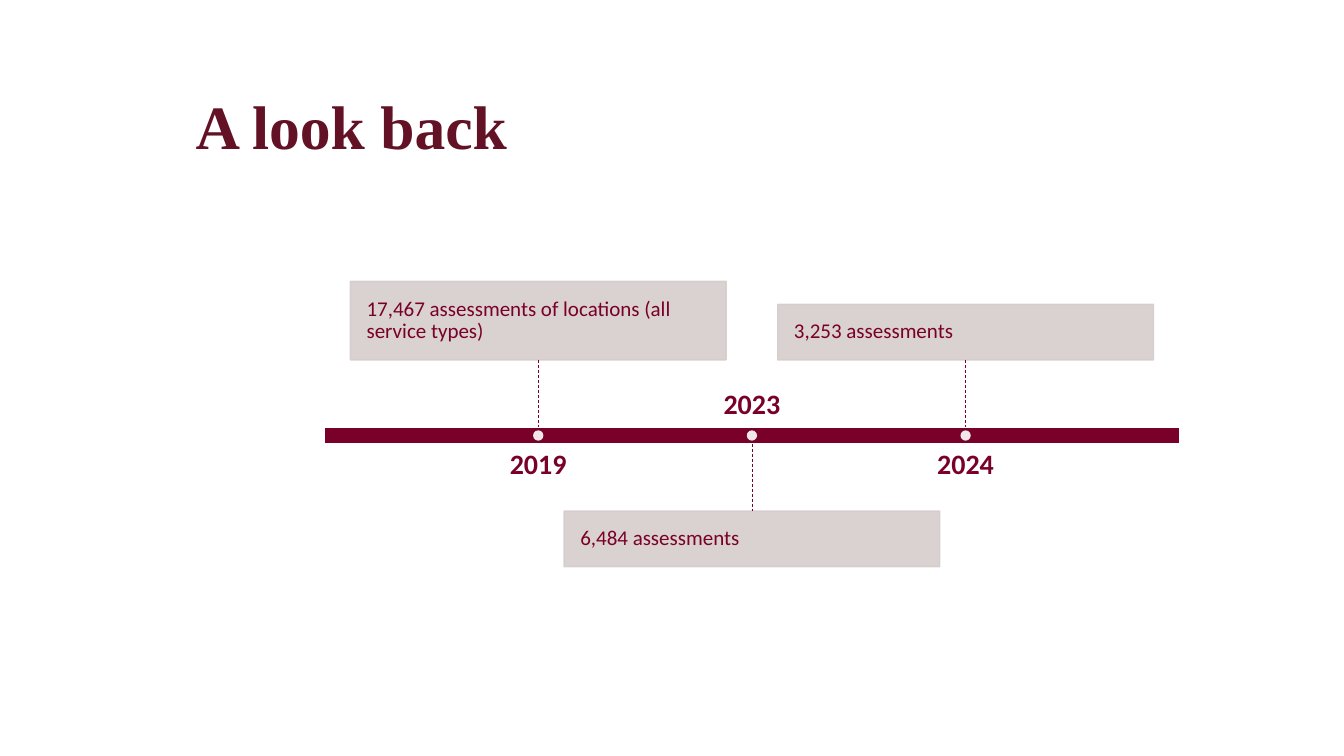
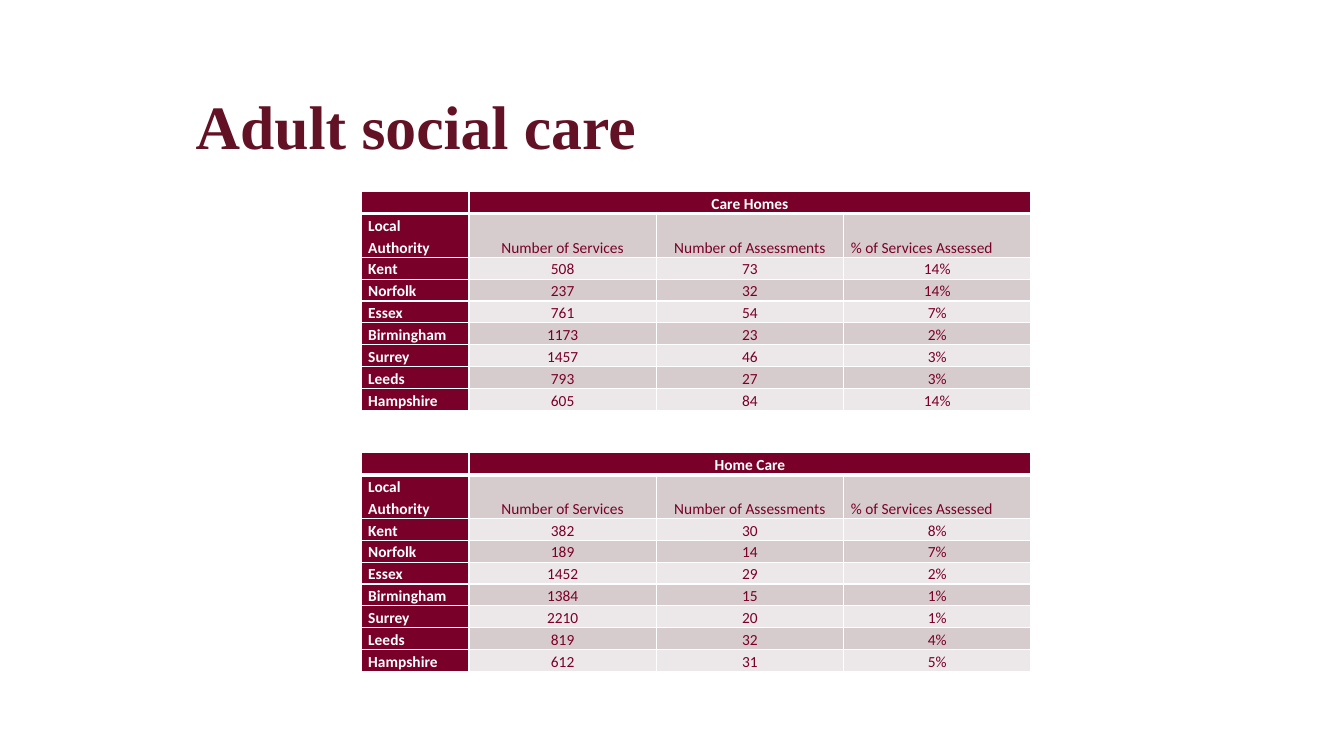
import pptx
import pptx.util
import pptx.dml.color
import pptx.enum.dml
import pptx.enum.shapes
import pptx.enum.text
import pptx.oxml.ns
from lxml import etree

Cm, Pt = pptx.util.Cm, pptx.util.Pt
ALIGN = pptx.enum.text.PP_ALIGN
ANCHOR = pptx.enum.text.MSO_ANCHOR
SHAPE = pptx.enum.shapes.MSO_SHAPE
qn = pptx.oxml.ns.qn

COLORS = {
    "title": "631226",
    "wine": "790028",
    "card": "D7CCCD",
    "pale": "ECE7E8",
    "white": "FFFFFF",
}
BODY_FONT, TITLE_FONT = "Calibri", "Times New Roman"

# Timeline geometry in cm
AXIS_X, AXIS_Y, AXIS_W, AXIS_H = 8.18, 10.77, 21.54, 0.41
STEM, LABEL_GAP = 1.7, 0.17
LABEL_W, LABEL_H = 8.61, 1.14
CARD_W, DOT = 9.47, 0.26

# Year, text, card height, card above the axis
MILESTONES = [
    ("2019", "17,467 assessments of locations (all service types)", 1.98, True),
    ("2023", "6,484 assessments", 1.4, False),
    ("2024", "3,253 assessments", 1.4, True),
]

# Table geometry in cm
TABLE_X, COL_WIDTHS, ROW_H = 9.1, (2.72, 4.72, 4.72, 4.72), 0.54
HEADINGS = ("Local Authority", "Number of Services",
            "Number of Assessments", "% of Services Assessed")
CARE_HOMES = [
    ("Kent", "508", "73", "14%"),
    ("Norfolk", "237", "32", "14%"),
    ("Essex", "761", "54", "7%"),
    ("Birmingham", "1173", "23", "2%"),
    ("Surrey", "1457", "46", "3%"),
    ("Leeds", "793", "27", "3%"),
    ("Hampshire", "605", "84", "14%"),
]
HOME_CARE = [
    ("Kent", "382", "30", "8%"),
    ("Norfolk", "189", "14", "7%"),
    ("Essex", "1452", "29", "2%"),
    ("Birmingham", "1384", "15", "1%"),
    ("Surrey", "2210", "20", "1%"),
    ("Leeds", "819", "32", "4%"),
    ("Hampshire", "612", "31", "5%"),
]


def rgb(name):
    return pptx.dml.color.RGBColor.from_string(COLORS[name])


def write(tf, text, size=15, font=BODY_FONT, color="wine", bold=False,
          align=ALIGN.LEFT, spacing=0.9):
    """Put one formatted paragraph into a text frame."""
    p = tf.paragraphs[0]
    p.alignment, p.line_spacing = align, spacing
    if not text:
        # An empty cell keeps the height of its font size
        etree.SubElement(p._p, qn("a:endParaRPr"), sz=str(size * 100))
        return
    r = p.add_run()
    r.text = text
    r.font.name, r.font.size, r.font.bold = font, Pt(size), bold
    r.font.color.rgb = rgb(color)


def set_frame(tf, anchor, x_inset=0, y_inset=0):
    tf.word_wrap = True
    tf.auto_size = pptx.enum.text.MSO_AUTO_SIZE.NONE
    tf.vertical_anchor = anchor
    tf.margin_left = tf.margin_right = Cm(x_inset)
    tf.margin_top = tf.margin_bottom = Cm(y_inset)


def add_slide(prs, title):
    s = prs.slides.add_slide(prs.slide_layouts[5])
    sp = s.shapes.title
    sp.left, sp.top, sp.width, sp.height = Cm(4.93), Cm(2.39), Cm(26.31), Cm(1.73)
    set_frame(sp.text_frame, ANCHOR.MIDDLE, y_inset=0.03)
    write(sp.text_frame, title, size=44, font=TITLE_FONT, color="title", bold=True)
    return s


def add_block(s, kind, x, y, w, h, fill, line=None, opacity=100):
    sp = s.shapes.add_shape(kind, Cm(x), Cm(y), Cm(w), Cm(h))
    sp.shadow.inherit = False
    sp.fill.solid()
    sp.fill.fore_color.rgb = rgb(fill)
    if line:
        sp.line.color.rgb = rgb(line)
        sp.line.width = Pt(1)
    else:
        sp.line.fill.background()
    if opacity < 100:
        for clr in sp._element.spPr.iter(qn("a:srgbClr")):
            etree.SubElement(clr, qn("a:alpha"), val=str(opacity * 1000))
    return sp


def add_stem(s, x, y):
    line = s.shapes.add_connector(pptx.enum.shapes.MSO_CONNECTOR.STRAIGHT,
                                  Cm(x), Cm(y), Cm(x), Cm(y + STEM))
    line.line.color.rgb = rgb("wine")
    line.line.width = Pt(0.5)
    line.line.dash_style = pptx.enum.dml.MSO_LINE.DASH
    etree.SubElement(line._element.spPr, qn("a:effectLst"))


def add_milestone(s, x, year, text, card_h, above):
    """Card and stem on one side of the axis, year on the other."""
    axis_bottom = AXIS_Y + AXIS_H
    if above:
        stem_y, card_y = AXIS_Y - STEM, AXIS_Y - STEM - card_h
        label_y, anchor = axis_bottom + LABEL_GAP, ANCHOR.TOP
    else:
        stem_y, card_y = axis_bottom, axis_bottom + STEM
        label_y, anchor = AXIS_Y - LABEL_GAP - LABEL_H, ANCHOR.BOTTOM

    card = add_block(s, SHAPE.RECTANGLE, x - CARD_W / 2, card_y, CARD_W, card_h,
                     "card", line="card", opacity=90)
    set_frame(card.text_frame, ANCHOR.MIDDLE, 0.41, 0.41)
    write(card.text_frame, text)

    label = s.shapes.add_textbox(Cm(x - LABEL_W / 2), Cm(label_y),
                                 Cm(LABEL_W), Cm(LABEL_H))
    set_frame(label.text_frame, anchor)
    write(label.text_frame, year, size=20, bold=True, align=ALIGN.CENTER)

    add_stem(s, x, stem_y)
    add_block(s, SHAPE.OVAL, x - DOT / 2, AXIS_Y + (AXIS_H - DOT) / 2, DOT, DOT,
              "white", opacity=90)


def style_cell(cell, fill, top, bottom):
    """White borders (widths in points), then fill, margins and anchor."""
    tc_pr = cell._tc.get_or_add_tcPr()
    for side, width in (("L", 1), ("R", 1), ("T", top), ("B", bottom)):
        ln = etree.SubElement(tc_pr, qn("a:ln" + side), w=str(Pt(width)))
        solid = etree.SubElement(ln, qn("a:solidFill"))
        etree.SubElement(solid, qn("a:srgbClr"), val=COLORS["white"])
    cell.fill.solid()
    cell.fill.fore_color.rgb = rgb(fill)
    cell.margin_left = cell.margin_right = Cm(0.18)
    cell.margin_top = cell.margin_bottom = 0
    cell.vertical_anchor = ANCHOR.BOTTOM


def add_care_table(s, y, heading, records):
    rows = [("", heading, "", ""), HEADINGS] + records
    frame = s.shapes.add_table(len(rows), len(COL_WIDTHS), Cm(TABLE_X), Cm(y),
                               Cm(sum(COL_WIDTHS)), Cm(ROW_H * (len(rows) + 1)))
    table = frame.table
    for col, width in zip(table.columns, COL_WIDTHS):
        col.width = Cm(width)
    table.cell(0, 1).merge(table.cell(0, 3))

    for i, values in enumerate(rows):
        # The headings take two lines
        table.rows[i].height = Cm(ROW_H * (2 if i == 1 else 1))
        for j, value in enumerate(values):
            dark = i == 0 or j == 0
            left = j == 0 or (i == 1 and j == 3)
            fill = "wine" if dark else "card" if i % 2 else "pale"
            cell = table.cell(i, j)
            style_cell(cell, fill, top=3 if i == 1 else 1, bottom=3 if i == 0 else 1)
            write(cell.text_frame, value, size=11, bold=dark, spacing=1.15,
                  color="white" if dark else "wine",
                  align=ALIGN.LEFT if left else ALIGN.CENTER)


def main():
    prs = pptx.Presentation()
    prs.slide_width, prs.slide_height = Cm(33.87), Cm(19.05)

    # Timeline
    s = add_slide(prs, "A look back")
    add_block(s, SHAPE.RECTANGLE, AXIS_X, AXIS_Y, AXIS_W, AXIS_H, "wine", line="white")
    step = AXIS_W / (len(MILESTONES) + 1)
    for i, milestone in enumerate(MILESTONES, 1):
        add_milestone(s, AXIS_X + i * step, *milestone)

    # Tables by local authority
    s = add_slide(prs, "Adult social care")
    add_care_table(s, 4.83, "Care Homes", CARE_HOMES)
    add_care_table(s, 11.41, "Home Care", HOME_CARE)

    prs.save("out.pptx")


if __name__ == "__main__":
    main()
